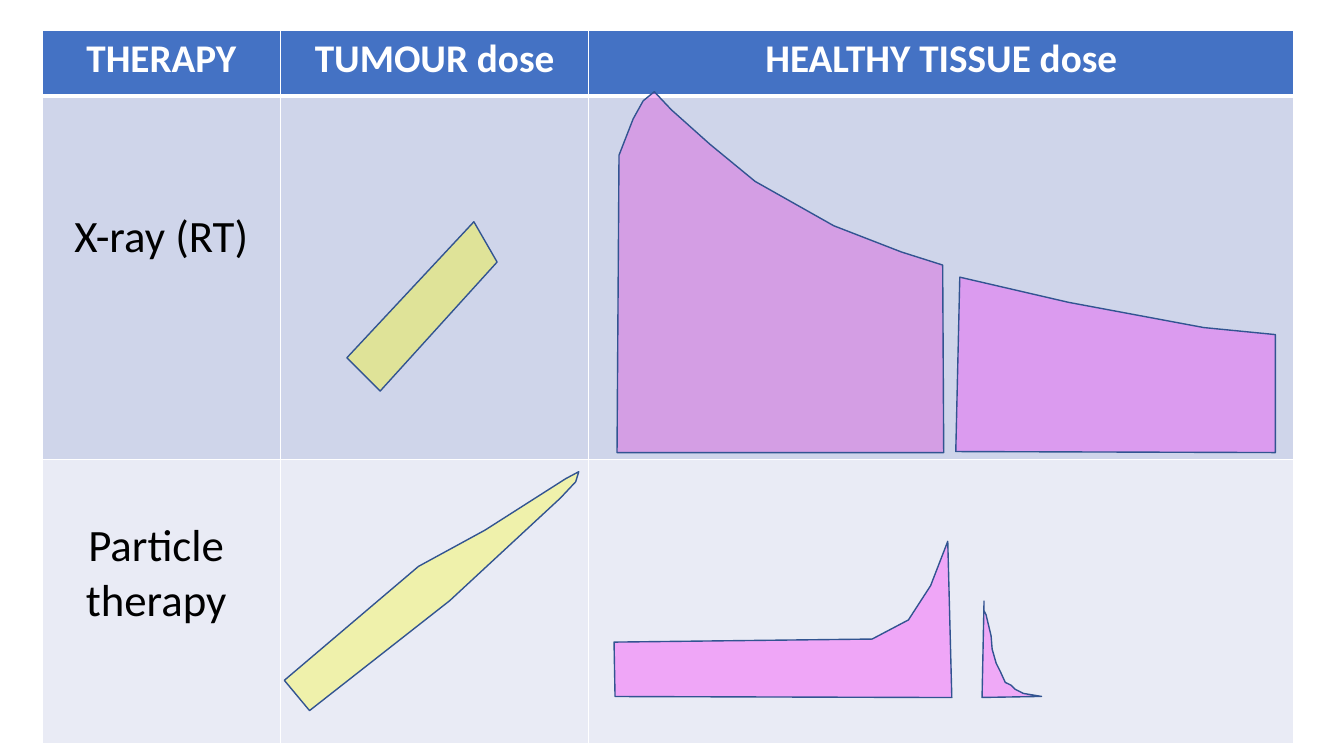
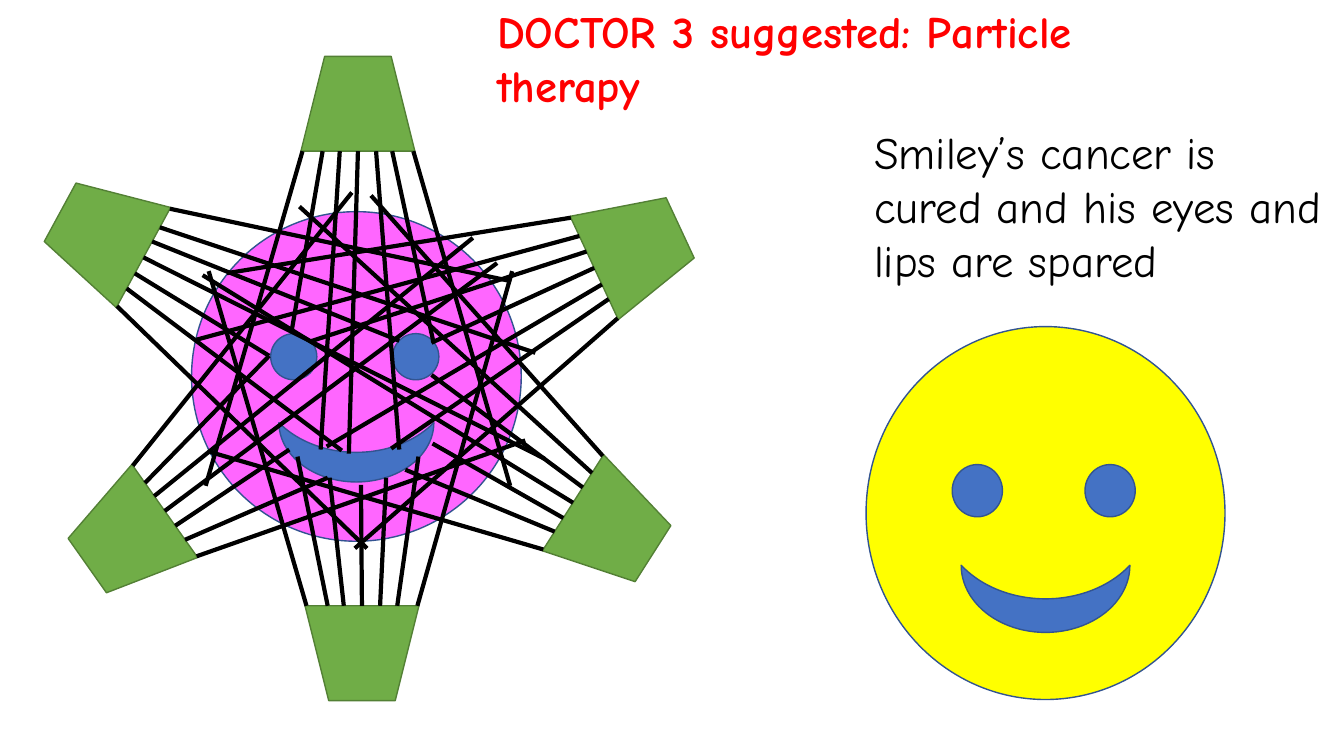
"""Build two slides comparing X-ray and particle therapy."""
from dataclasses import dataclass
from math import cos, radians, sin

from lxml.etree import SubElement
from pptx import Presentation
from pptx.dml.color import RGBColor
from pptx.enum.shapes import MSO_CONNECTOR as Connector, MSO_SHAPE as Preset
from pptx.enum.text import MSO_ANCHOR as Anchor, MSO_AUTO_SIZE as AutoSize, PP_ALIGN as Align
from pptx.oxml.ns import qn
from pptx.util import Inches, Pt

Point = tuple[float, float]
Box = tuple[float, float, float, float]


@dataclass(frozen=True)
class Theme:
    """Colours, fonts and sizes shared by the slides."""
    white: str = "FFFFFF"
    black: str = "000000"
    red: str = "FF0000"
    blue: str = "4472C4"
    outline: str = "325491"
    green: str = "70AD47"
    green_outline: str = "538035"
    yellow: str = "FFFF00"
    magenta: str = "FF00FF"
    orchid: str = "E226D9"
    pink: str = "FF66FF"
    row_fills: tuple[str, ...] = ("4472C4", "CFD5EA", "E9EBF5")
    table_font: str = "Calibri"
    story_font: str = "Comic Neue"
    header_size: int = 28
    text_size: int = 32
    thin: float = 1
    thick: float = 3


@dataclass(frozen=True)
class DoseArea:
    """A translucent outline of the dose given to some tissue."""
    color: str
    opacity: int
    points: tuple[Point, ...]
    closed: bool = True


@dataclass(frozen=True)
class Face:
    """A smiley face in a box."""
    box: Box
    color: str


@dataclass(frozen=True)
class Emitter:
    """A beam source with its centre, its turn and the ends of its rays."""
    center: Point
    rotation: float
    targets: tuple[Point, ...]


THEME = Theme()
SLIDE_SIZE = (13.33, 7.5)
TABLE_BOX = (0.42, 0.3, 12.42, 7.08)
COLUMNS = (2.36, 3.06, 6.99)
ROWS = (0.65, 3.61, 2.82)
CELL_TEXTS = (
    ("THERAPY", "TUMOUR dose", "HEALTHY TISSUE dose"),
    ("X-ray (RT)", "", ""),
    ("Particle \ntherapy ", "", ""),
)
CELL_TOPS = (0.05, 1.13, 0.59)

DOSE_AREAS = (
    DoseArea(THEME.orchid, 31, (
        (6.12, 4.49), (6.14, 1.54), (6.28, 1.18), (6.38, 1), (6.49, 0.91), (6.66, 1.09),
        (7.04, 1.43), (7.49, 1.8), (8.27, 2.24), (8.94, 2.5), (9.35, 2.63), (9.36, 4.49))),
    DoseArea(THEME.magenta, 27, (
        (9.48, 4.48), (9.52, 2.75), (10.6, 3), (11.94, 3.25), (12.65, 3.32), (12.65, 4.49))),
    DoseArea(THEME.yellow, 35, ((3.44, 3.55), (3.77, 3.88), (4.93, 2.6), (4.7, 2.2))),
    DoseArea(THEME.yellow, 30, (
        (2.82, 6.75), (3.07, 7.05), (4.46, 5.96), (5.56, 4.94), (5.71, 4.78),
        (5.74, 4.68), (5.61, 4.75), (4.81, 5.26), (4.15, 5.62))),
    DoseArea(THEME.magenta, 29, (
        (6.1, 6.91), (6.09, 6.37), (8.65, 6.34), (9.01, 6.15), (9.23, 5.81),
        (9.4, 5.37), (9.44, 6.92))),
    DoseArea(THEME.magenta, 28, (
        (9.76, 5.96), (9.74, 6.92), (10.33, 6.91), (10.15, 6.88), (10.07, 6.84),
        (10.03, 6.8), (9.97, 6.77), (9.92, 6.66), (9.88, 6.58), (9.84, 6.44),
        (9.83, 6.31), (9.78, 6.1), (9.76, 6.06)), closed=False),
)

SICK_FACE = Face((1.9, 2.1, 3.27, 3.27), THEME.pink)
CURED_FACE = Face((8.59, 3.24, 3.56, 3.7), THEME.yellow)
EYES = ((0.24, 0.37), (0.61, 0.37))
EYE_SHARE = 0.14
MOUTH_CENTER = (0.5, 0.73)
MOUTH_SHARE = (0.47, 0.18)

EMITTER_SIZE = (1.13, 0.94)
RAY_OFFSETS = (-0.55, -0.35, -0.18, 0, 0.18, 0.34, 0.55)
EMITTERS = (
    Emitter((1.01, 2.33), 298.5, ((3.64, 5.44), (3.39, 4.47), (2.67, 3.53), (5.4, 4.55),
                                  (3.96, 3.38), (5.31, 3.5), (5.07, 2.79))),
    Emitter((3.55, 1.03), 0, ((2.04, 4.82), (2.89, 3.3), (3.18, 4.46), (3.46, 4.5),
                              (3.96, 4.46), (4.3, 3.4), (5.06, 4.82))),
    Emitter((1.25, 5.34), 234.8, ((5.21, 4.37), (3.25, 4.74), (2.87, 4.46), (4.93, 2.61),
                                  (4.69, 2.36), (2.67, 3.53), (3.49, 1.91))),
    Emitter((6.08, 5.24), 122.5, ((3.68, 1.94), (2.97, 2.05), (4.28, 3.72), (2.01, 2.73),
                                  (4.29, 4.4), (4.02, 4.66), (2.07, 4.48))),
    Emitter((6.32, 2.46), 65, ((2.25, 2.71), (1.95, 3.37), (3.07, 3.39), (4.28, 3.4),
                               (3.24, 4.43), (3.88, 4.45), (3.52, 5.44))),
    Emitter((3.59, 6.48), 180, ((5.08, 2.69), (4.15, 4.53), (3.83, 4.74), (3.58, 4.81),
                                (3.27, 4.74), (2.95, 4.53), (2.07, 2.69))),
)


def grid(*lengths: float) -> list[int]:
    """Turn lengths in one-inch grid cells into slide units."""
    return [Inches(length) for length in lengths]


def rgb(color: str) -> RGBColor:
    """Return the colour of a hexadecimal string."""
    return RGBColor.from_string(color)


def write_text(text_frame, text: str, *, font: str, size: float, color: str,
               bold: bool = False, align=Align.LEFT) -> None:
    """Write one paragraph a line in the given format, without bullets."""
    text_frame.text = text
    for paragraph in text_frame.paragraphs:
        paragraph.alignment = align
        paragraph.space_before = Pt(0)
        properties = paragraph._p.get_or_add_pPr()
        properties.set("marL", "0")
        properties.set("indent", "0")
        SubElement(properties, qn("a:buNone"))
        for run in paragraph.runs:
            run.font.name = font
            run.font.size = Pt(size)
            run.font.bold = bold
            run.font.color.rgb = rgb(color)


def style_shape(shape, fill: str, line: str, opacity: int = 100) -> None:
    """Give a shape its fill and outline."""
    shape.shadow.inherit = False
    shape.fill.solid()
    shape.fill.fore_color.rgb = rgb(fill)
    shape.line.color.rgb = rgb(line)
    shape.line.width = Pt(THEME.thin)
    if opacity < 100:
        color = shape._element.spPr.find(qn("a:solidFill")).find(qn("a:srgbClr"))
        SubElement(color, qn("a:alpha"), val=str(opacity * 1000))


def add_preset(slide, preset, center: Point, size: Point, fill: str,
               line: str = THEME.outline, rotation: float = 0) -> None:
    """Add a preset shape around its centre."""
    width, height = size
    left, top = center[0] - width / 2, center[1] - height / 2
    shape = slide.shapes.add_shape(preset, *grid(left, top, width, height))
    shape.rotation = rotation
    style_shape(shape, fill, line)


def add_ray(slide, start: Point, end: Point) -> None:
    """Add a black line from a source into the face."""
    connector = slide.shapes.add_connector(Connector.STRAIGHT, *grid(*start, *end))
    connector.line.color.rgb = rgb(THEME.black)
    connector.line.width = Pt(THEME.thick)
    SubElement(connector._element.spPr, qn("a:effectLst"))


def add_emitter(slide, emitter: Emitter) -> None:
    """Add a beam source and rays leaving its wide edge."""
    add_preset(slide, Preset.TRAPEZOID, emitter.center, EMITTER_SIZE, THEME.green,
               THEME.green_outline, emitter.rotation)
    angle = radians(emitter.rotation)
    reach = EMITTER_SIZE[1] / 2
    for offset, target in zip(RAY_OFFSETS, emitter.targets):
        start = (emitter.center[0] + offset * cos(angle) - reach * sin(angle),
                 emitter.center[1] + offset * sin(angle) + reach * cos(angle))
        add_ray(slide, start, target)


def add_face(slide, face: Face) -> None:
    """Add a face whose features are shares of its box."""
    left, top, width, height = face.box

    def place(share: Point) -> Point:
        """Return the point at a share of the face."""
        return left + share[0] * width, top + share[1] * height

    add_preset(slide, Preset.OVAL, place((0.5, 0.5)), (width, height), face.color)
    mouth_size = (MOUTH_SHARE[1] * height, MOUTH_SHARE[0] * width)
    add_preset(slide, Preset.MOON, place(MOUTH_CENTER), mouth_size, THEME.blue, rotation=270)
    for column, row in EYES:
        center = place((column + EYE_SHARE / 2, row + EYE_SHARE / 2))
        add_preset(slide, Preset.OVAL, center, (EYE_SHARE * width, EYE_SHARE * height), THEME.blue)


def add_dose_area(slide, area: DoseArea) -> None:
    """Add a dose area as a freeform."""
    points = [tuple(grid(*point)) for point in area.points]
    builder = slide.shapes.build_freeform(*points[0], scale=1.0)
    builder.add_line_segments(points[1:], close=area.closed)
    style_shape(builder.convert_to_shape(), area.color, THEME.outline, area.opacity)


def style_cell(cell, row: int) -> None:
    """Give a cell its white borders and row fill."""
    properties = cell._tc.get_or_add_tcPr()
    widths = {"lnL": THEME.thin, "lnR": THEME.thin,
              "lnT": THEME.thick if row == 1 else THEME.thin,
              "lnB": THEME.thick if row == 0 else THEME.thin}
    for side, width in widths.items():
        border = SubElement(properties, qn(f"a:{side}"), w=str(Pt(width)))
        fill = SubElement(border, qn("a:solidFill"))
        SubElement(fill, qn("a:srgbClr"), val=THEME.white)
    cell.fill.solid()
    cell.fill.fore_color.rgb = rgb(THEME.row_fills[row])
    cell.margin_top = Inches(CELL_TOPS[row])


def add_dose_table(slide) -> None:
    """Add the table of therapies and doses."""
    table = slide.shapes.add_table(len(ROWS), len(COLUMNS), *grid(*TABLE_BOX)).table
    for column, width in zip(table.columns, grid(*COLUMNS)):
        column.width = width
    for row, height in zip(table.rows, grid(*ROWS)):
        row.height = height
    for row, texts in enumerate(CELL_TEXTS):
        header = row == 0
        for column, text in enumerate(texts):
            cell = table.cell(row, column)
            style_cell(cell, row)
            if text:
                write_text(cell.text_frame, text, font=THEME.table_font, bold=header,
                           size=THEME.header_size if header else THEME.text_size,
                           color=THEME.white if header else THEME.black, align=Align.CENTER)


def fill_placeholder(placeholder, box: Box, text: str, color: str, bold: bool = False) -> None:
    """Move a placeholder and write its text."""
    placeholder.left, placeholder.top, placeholder.width, placeholder.height = grid(*box)
    text_frame = placeholder.text_frame
    text_frame.word_wrap = True
    text_frame.auto_size = AutoSize.NONE
    text_frame.vertical_anchor = Anchor.TOP
    write_text(text_frame, text, font=THEME.story_font, size=THEME.text_size, color=color, bold=bold)


def build_dose_slide(presentation) -> None:
    """Build the slide that compares doses."""
    slide = presentation.slides.add_slide(presentation.slide_layouts.get_by_name("Blank"))
    add_dose_table(slide)
    for area in DOSE_AREAS:
        add_dose_area(slide, area)


def build_therapy_slide(presentation) -> None:
    """Build the slide on the particle therapy of the smiley."""
    layout = presentation.slide_layouts.get_by_name("Title and Content")
    slide = presentation.slides.add_slide(layout)
    fill_placeholder(slide.shapes.title, (4.83, -0.01, 6.18, 1.18),
                     "DOCTOR 3 suggested: Particle therapy", THEME.red, bold=True)
    fill_placeholder(slide.placeholders[1], (8.57, 1.19, 4.71, 1.72),
                     "Smiley’s cancer is cured and his eyes and lips are spared", THEME.black)
    add_face(slide, SICK_FACE)
    for emitter in EMITTERS:
        add_emitter(slide, emitter)
    add_face(slide, CURED_FACE)


def main() -> None:
    """Build and save the presentation."""
    presentation = Presentation()
    presentation.slide_width, presentation.slide_height = grid(*SLIDE_SIZE)
    build_dose_slide(presentation)
    build_therapy_slide(presentation)
    presentation.save("out.pptx")


if __name__ == "__main__":
    main()
